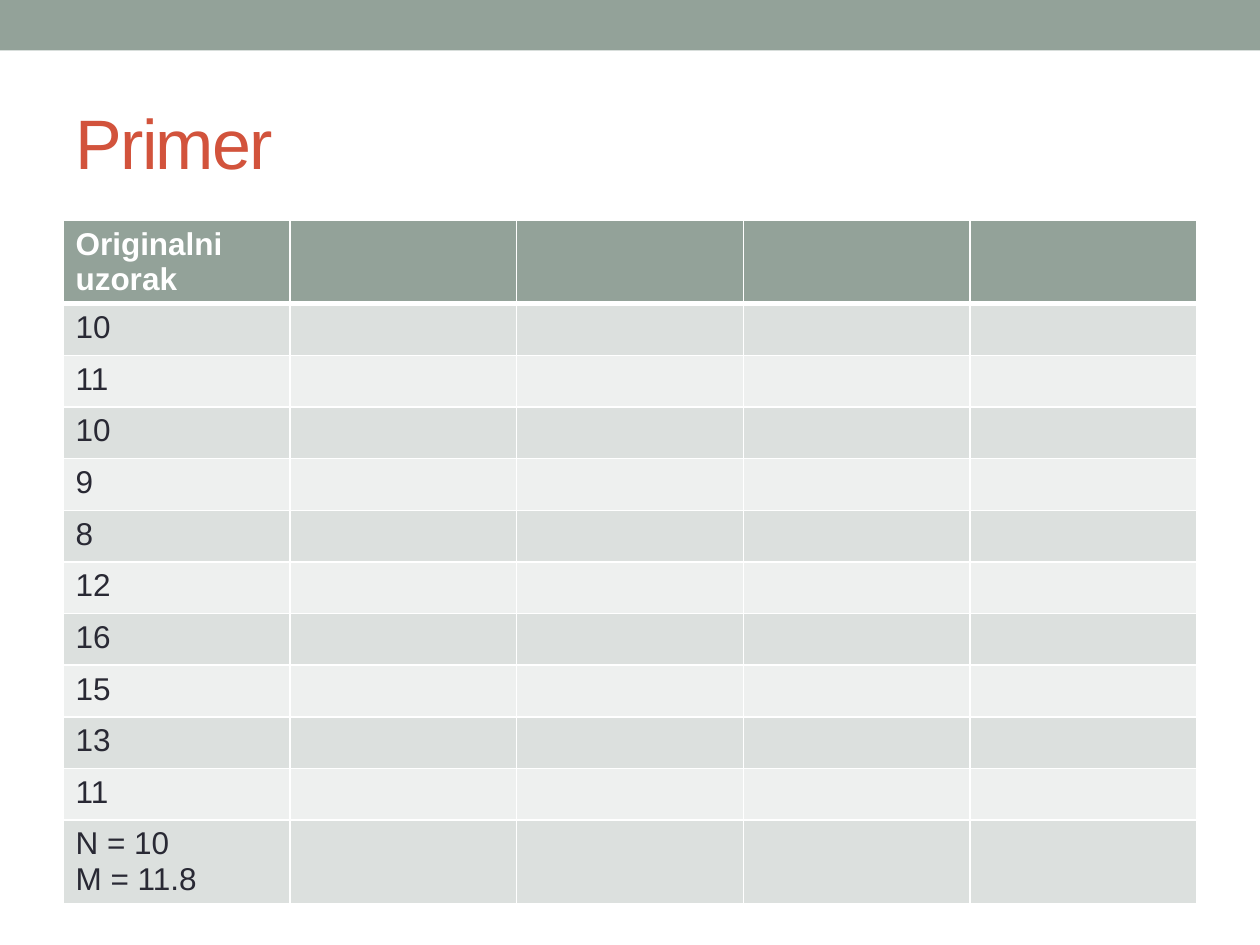
from pptx import Presentation
from pptx import util as u
from pptx.dml.color import RGBColor
from pptx.enum import shapes, text
from pptx.oxml import parse_xml
from pptx.oxml.ns import nsdecls

FONT = "Arial"
SAGE, RUST, INK, WHITE = "93A299", "D2533C", "292934", "FFFFFF"
BANDS = ("EEF0EF", "DCE0DE")
COLUMNS = 5
HEADER = "Originalni uzorak"
SAMPLE = [10, 11, 10, 9, 8, 12, 16, 15, 13, 11]
SUMMARY = "N = 10\nM = 11.8"


def paint(fill, color):
    fill.solid()
    fill.fore_color.rgb = RGBColor.from_string(color)


def write(tf, content, size, color, bold=False):
    """Write one paragraph per line of content and return the runs."""
    runs = []
    for i, line in enumerate(content.split("\n")):
        p = tf.add_paragraph() if i else tf.paragraphs[0]
        p.alignment = text.PP_ALIGN.LEFT
        r = p.add_run()
        r.text = line
        r.font.name, r.font.size, r.font.bold = FONT, u.Pt(size), bold
        r.font.color.rgb = RGBColor.from_string(color)
        runs.append(r)
    return runs


def set_borders(cell, **widths):
    """Draw white cell edges; widths in points, keyed by L, R, T and B."""
    tcPr = cell._tc.get_or_add_tcPr()
    for i, (side, width) in enumerate(widths.items()):
        tcPr.insert(i, parse_xml(
            f'<a:ln{side} {nsdecls("a")} w="{u.Pt(width)}"><a:solidFill>'
            f'<a:srgbClr val="{WHITE}"/></a:solidFill></a:ln{side}>'))


def add_band(s, box):
    band = s.shapes.add_shape(shapes.MSO_SHAPE.RECTANGLE, *box)
    band.shadow.inherit = False
    paint(band.fill, SAGE)
    band.line.fill.background()


def fill_title(s, box):
    title = s.shapes.title
    title.left, title.top, title.width, title.height = box
    tf = title.text_frame
    tf.word_wrap = True
    tf.vertical_anchor = text.MSO_ANCHOR.MIDDLE
    for r in write(tf, "Primer", 40, RUST):
        r.font._element.set("spc", "-100")


def add_sample_table(s, box):
    """Header and summary rows are two lines high, sample rows one."""
    labels = [HEADER, *map(str, SAMPLE), SUMMARY]
    last = len(labels) - 1
    table = s.shapes.add_table(len(labels), COLUMNS, *box).table
    for row, label in enumerate(labels):
        head = row == 0
        table.rows[row].height = u.Inches(0.64 if row in (0, last) else 0.41)
        for col in range(COLUMNS):
            cell = table.cell(row, col)
            paint(cell.fill, SAGE if head else BANDS[row % 2])
            set_borders(cell, L=1, R=1, T=3 if row == 1 else 1, B=3 if head else 1)
        write(table.cell(row, 0).text_frame, label, 18, WHITE if head else INK, head)


def main():
    prs = Presentation()
    prs.slide_width, prs.slide_height = u.Inches(10), u.Inches(7.5)
    width = prs.slide_width
    margin = int(width * 0.05)
    inner = width - 2 * margin
    s = prs.slides.add_slide(prs.slide_layouts[5])
    paint(s.background.fill, WHITE)
    add_band(s, (0, 0, width, u.Inches(0.4)))
    fill_title(s, (margin, u.Inches(0.58), inner, u.Inches(1.08)))
    add_sample_table(s, (margin, u.Inches(1.75), inner, u.Inches(5.38)))
    prs.save("out.pptx")


if __name__ == "__main__":
    main()
